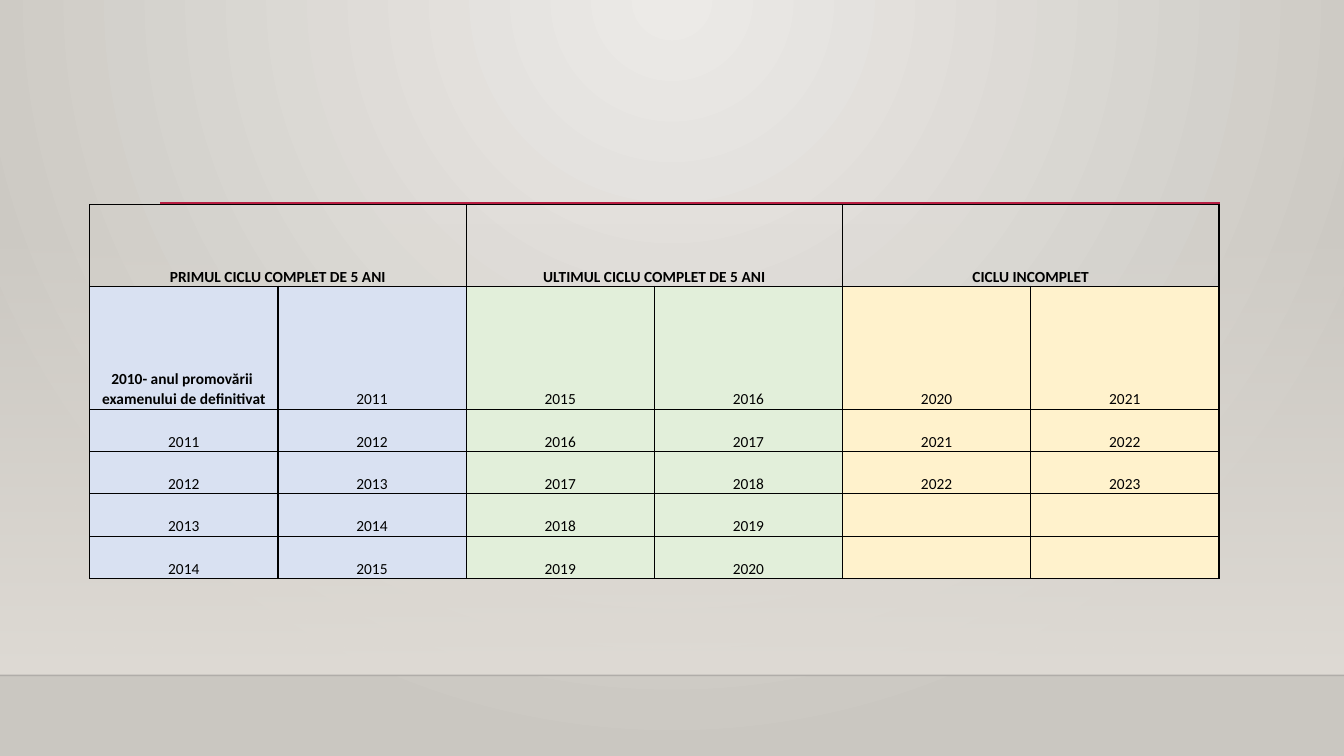
from lxml import etree
from pptx import Presentation
from pptx.dml.color import RGBColor
from pptx.enum import shapes, text
from pptx.oxml import parse_xml
from pptx.oxml.ns import nsdecls, qn
from pptx.util import Inches, Pt

COLORS = {
    "glow": "ECEAE7", "edge": "CAC7C1", "wall": "DFDBD5",
    "floor": "000001", "accent": "B71E42", "ink": "000000",
    "first": "D9E1F2", "last": "E2EFDA", "incomplete": "FFF2CC",
}
CYCLES = [
    ("PRIMUL CICLU COMPLET DE 5 ANI", "first", 2010, 5),
    ("ULTIMUL CICLU COMPLET DE 5 ANI", "last", 2015, 5),
    ("CICLU INCOMPLET", "incomplete", 2020, 3),
]
FIRST_YEAR = "2010- anul promovării \nexamenului de definitivat"
ROW_HEIGHTS = [0.81, 1.22] + [0.42] * 4
COLUMN_WIDTH = 11.2 / 6


def rgb(name):
    return RGBColor.from_string(COLORS[name])


def set_alpha(color_parent, percent):
    color = color_parent.find(".//" + qn("a:srgbClr"))
    etree.SubElement(color, qn("a:alpha")).set("val", str(percent * 1000))


def set_gradient(fill, names):
    fill.gradient()
    for stop, name in zip(fill.gradient_stops, names):
        stop.color.rgb = rgb(name)


def paint_background(slide):
    set_gradient(slide.background.fill, ["glow", "edge"])
    gradient = slide.element.find(".//" + qn("a:gradFill"))
    gradient.replace(gradient.find(qn("a:lin")), parse_xml(
        f'<a:path {nsdecls("a")} path="circle">'
        '<a:fillToRect l="43000" t="0" r="43000" b="100000"/></a:path>'))


def add_wall(slide):
    wall = slide.shapes.add_shape(
        shapes.MSO_SHAPE.RECTANGLE, 0, Inches(2.21), Inches(13.33), Inches(4.49))
    wall.shadow.inherit = False
    wall.line.fill.background()
    set_gradient(wall.fill, ["wall", "wall"])
    wall.fill.gradient_angle = 270
    set_alpha(wall.element.spPr.find(qn("a:gradFill")), 0)


def add_rule(slide, left, right, top, color, width):
    rule = slide.shapes.add_connector(
        shapes.MSO_CONNECTOR.STRAIGHT,
        Inches(left), Inches(top), Inches(right), Inches(top))
    rule.line.color.rgb = rgb(color)
    rule.line.width = Pt(width)
    etree.SubElement(rule.element.spPr, qn("a:effectLst"))
    return rule


def add_borders(cell):
    properties = cell._tc.get_or_add_tcPr()
    for index, side in enumerate(["lnL", "lnR", "lnT", "lnB"]):
        properties.insert(index, parse_xml(
            f'<a:{side} {nsdecls("a")} w="12700"><a:solidFill>'
            f'<a:srgbClr val="{COLORS["ink"]}"/></a:solidFill></a:{side}>'))


def fill_cell(cell, content, color=None, bold=False):
    cell.text = content
    cell.vertical_anchor = text.MSO_ANCHOR.BOTTOM
    cell.margin_left = cell.margin_right = Inches(0.07)
    cell.margin_top = cell.margin_bottom = 0
    if color:
        cell.fill.solid()
        cell.fill.fore_color.rgb = rgb(color)
    else:
        cell.fill.background()
    for paragraph in cell.text_frame.paragraphs:
        paragraph.alignment = text.PP_ALIGN.CENTER
        paragraph.line_spacing = 1.07
        paragraph.font.name = "Calibri"
        paragraph.font.size = Pt(11)
        paragraph.font.bold = bold
        paragraph.font.color.rgb = rgb("ink")
    add_borders(cell)


def add_cycle(table, column, title, color, start, count):
    fill_cell(table.cell(0, column), title, bold=True)
    fill_cell(table.cell(0, column + 1), "")
    table.cell(0, column).merge(table.cell(0, column + 1))
    for row in range(1, len(ROW_HEIGHTS)):
        for offset in range(2):
            year = str(start + row - 1 + offset) if row <= count else ""
            is_first = year == "2010"
            fill_cell(table.cell(row, column + offset),
                      FIRST_YEAR if is_first else year, color, bold=is_first)


def add_cycle_table(slide):
    table = slide.shapes.add_table(
        len(ROW_HEIGHTS), 2 * len(CYCLES), Inches(0.89), Inches(2.03),
        Inches(11.2), Inches(sum(ROW_HEIGHTS))).table
    table.first_row = False
    table.horz_banding = False
    for column in table.columns:
        column.width = Inches(COLUMN_WIDTH)
    for row, height in zip(table.rows, ROW_HEIGHTS):
        row.height = Inches(height)
    for index, cycle in enumerate(CYCLES):
        add_cycle(table, 2 * index, *cycle)


def main():
    presentation = Presentation()
    presentation.slide_width = Inches(13.33)
    presentation.slide_height = Inches(7.5)
    slide = presentation.slides.add_slide(presentation.slide_layouts[6])
    paint_background(slide)
    add_wall(slide)
    floor_line = add_rule(slide, 0, 13.33, 6.7, "floor", 1)
    set_alpha(floor_line.element.spPr, 20)
    add_rule(slide, 1.59, 12.1, 2.02, "accent", 2.5)
    add_cycle_table(slide)
    presentation.save("out.pptx")


if __name__ == "__main__":
    main()
